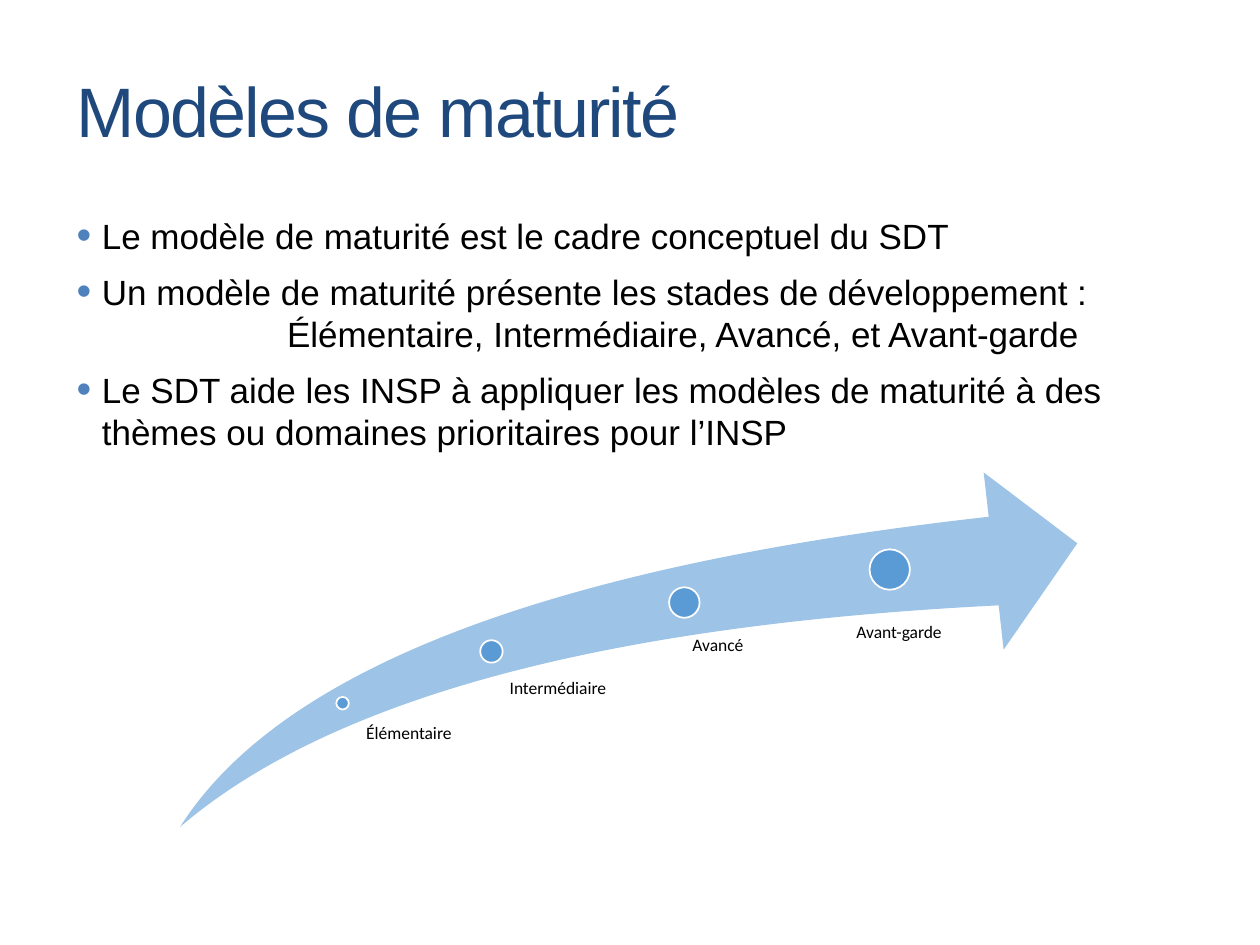
import pptx
import pptx.util
import pptx.dml.color
import pptx.enum.shapes
import pptx.enum.text
import pptx.oxml.ns
from dataclasses import dataclass
from lxml import etree

Inches, Pt = pptx.util.Inches, pptx.util.Pt
KIND = pptx.enum.shapes.MSO_SHAPE
ALIGN = pptx.enum.text.PP_ALIGN
ANCHOR = pptx.enum.text.MSO_ANCHOR
WIDE, HIGH = 10, 7.5


@dataclass(frozen=True)
class Theme:
    head: str = "1F497D"
    ink: str = "000000"
    mark: str = "4F81BD"
    arrow: str = "9DC3E6"
    dot: str = "5B9BD5"
    rim: str = "FFFFFF"
    sans: str = "Arial"
    small: str = "Calibri"
    head_size: int = 40
    body_size: int = 20
    label_size: int = 10


THEME = Theme()

POINTS = [
    "Le modèle de maturité est le cadre conceptuel du SDT",
    "Un modèle de maturité présente les stades de développement\u00a0:"
    "\v\tÉlémentaire, Intermédiaire, Avancé, et Avant-garde",
    "Le SDT aide les INSP à appliquer les modèles de maturité à des "
    "thèmes ou domaines prioritaires pour l’INSP",
]

# Name, dot centre and diameter, label box: percent of the arrow's box
STAGES = [
    ("Élémentaire", (18.1, 65.1, 1.4), (20, 71.2, 10.8, 23.8)),
    ("Intermédiaire", (34.7, 50.5, 2.5), (35.4, 58.4, 13.2, 13.2)),
    ("Avancé", (56.2, 36.7, 3.4), (55.3, 46.3, 12.4, 13.9)),
    ("Avant-garde", (79.1, 27.4, 4.5), (73, 42.7, 18.8, 8.9)),
]


def share(box, left, top, wide, high):
    """Turn percentages of a box into a box in inches."""
    x, y, w, h = box
    return (x + w * left / 100, y + h * top / 100,
            w * wide / 100, h * high / 100)


def emu(box):
    return [Inches(v) for v in box]


def rgb(code):
    return pptx.dml.color.RGBColor.from_string(code)


def style(font, name, size, color):
    font.name, font.size = name, Pt(size)
    font.color.rgb = rgb(color)


def shape(shapes, kind, box, fill, rim=None):
    item = shapes.add_shape(kind, *emu(box))
    item.shadow.inherit = False
    item.fill.solid()
    item.fill.fore_color.rgb = rgb(fill)
    if rim:
        item.line.color.rgb = rgb(rim)
        item.line.width = Pt(1)
    else:
        item.line.fill.background()
    return item


def bullet(para, tab):
    props = para._p.get_or_add_pPr()
    props.set("marL", str(Inches(0.2)))
    props.set("indent", str(-Inches(0.2)))

    def add(parent, tag, **attrs):
        return etree.SubElement(parent, pptx.oxml.ns.qn("a:" + tag), attrs)

    add(add(props, "buClr"), "srgbClr", val=THEME.mark)
    add(props, "buSzPct", val="120000")
    add(props, "buFont", typeface=THEME.sans)
    add(props, "buChar", char="•")
    add(add(props, "tabLst"), "tab", pos=str(Inches(tab)), algn="l")


def title(slide, box, text):
    item = slide.shapes.title
    item.left, item.top, item.width, item.height = emu(box)
    frame = item.text_frame
    frame.text = text
    frame.vertical_anchor = ANCHOR.MIDDLE
    para = frame.paragraphs[0]
    para.alignment = ALIGN.LEFT
    style(para.font, THEME.sans, THEME.head_size, THEME.head)
    para.runs[0]._r.get_or_add_rPr().set("spc", "-100")


def body(slide, box):
    frame = slide.shapes.add_textbox(*emu(box)).text_frame
    frame.word_wrap = True
    for i, text in enumerate(POINTS):
        para = frame.add_paragraph() if i else frame.paragraphs[0]
        para.text = text
        bullet(para, 1.67)
        para.space_before = Pt(6 if i else 0)
        para.space_after = Pt(2)
        style(para.font, THEME.sans, THEME.body_size, THEME.ink)


def label(shapes, box, text, inset):
    frame = shapes.add_textbox(*emu(box)).text_frame
    frame.word_wrap = True
    frame.margin_left = Inches(inset)
    frame.margin_top = frame.margin_right = frame.margin_bottom = 0
    para = frame.paragraphs[0]
    para.text = text
    para.line_spacing = 0.9
    style(para.font, THEME.small, THEME.label_size, THEME.ink)


def path_of_stages(slide, box):
    shapes = slide.shapes.add_group_shape().shapes
    arrow = shape(shapes, KIND.SWOOSH_ARROW, box, THEME.arrow)
    arrow.adjustments[0] = arrow.adjustments[1] = 0.25
    for name, (across, down, size), place in STAGES:
        x, y, wide, _ = share(box, across, down, size, 0)
        dot = (x - wide / 2, y - wide / 2, wide, wide)
        shape(shapes, KIND.OVAL, dot, THEME.dot, THEME.rim)
        label(shapes, share(box, *place), name, 0.53 * wide)


def main():
    deck = pptx.Presentation()
    deck.slide_width, deck.slide_height = Inches(WIDE), Inches(HIGH)
    slide = deck.slides.add_slide(deck.slide_layouts[5])
    page = (0, 0, WIDE, HIGH)
    title(slide, share(page, 5.1, 4.4, 90, 14.4), "Modèles de maturité")
    path_of_stages(slide, share(page, 14.3, 50, 71.2, 37.5))
    body(slide, share(page, 5.1, 22, 84.9, 34.7))
    deck.save("out.pptx")


if __name__ == "__main__":
    main()
